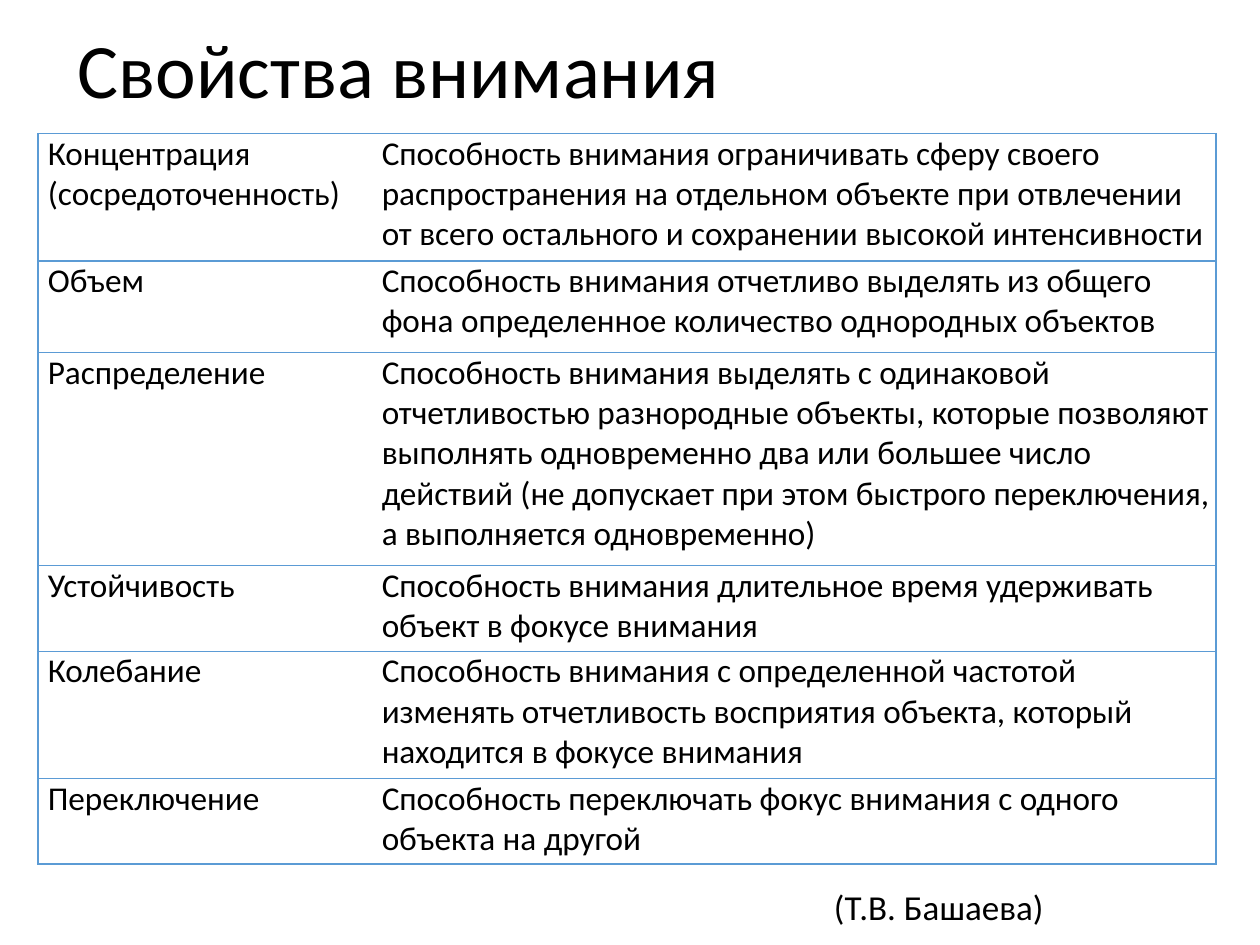
from lxml import etree
from pptx import Presentation
from pptx.dml.color import RGBColor
from pptx.enum import text
from pptx.oxml import ns
from pptx.util import Inches, Pt

BLACK = RGBColor(0x00, 0x00, 0x00)
WHITE = RGBColor(0xFF, 0xFF, 0xFF)
BLUE = RGBColor(0x5B, 0x9B, 0xD5)
FONT = "Calibri"

COLUMN_WIDTHS = [2.65, 6.7]
# Property, definition, row height in inches
PROPERTIES = [
    ("Концентрация (сосредоточенность)",
     "Способность внимания ограничивать сферу своего распространения на отдельном "
     "объекте при отвлечении от всего остального и сохранении высокой интенсивности", 1.01),
    ("Объем",
     "Способность внимания отчетливо выделять из общего фона определенное "
     "количество однородных объектов", 0.73),
    ("Распределение",
     "Способность внимания выделять с одинаковой отчетливостью разнородные объекты, "
     "которые позволяют выполнять одновременно два или большее число действий "
     "(не допускает при этом быстрого переключения, а выполняется одновременно)", 1.69),
    ("Устойчивость",
     "Способность внимания длительное время удерживать объект в фокусе внимания", 0.68),
    ("Колебание",
     "Способность внимания с определенной частотой изменять отчетливость восприятия "
     "объекта, который находится в фокусе внимания", 1.01),
    ("Переключение",
     "Способность переключать фокус внимания с одного объекта на другой", 0.68),
]


def write(frame, words, size, color=BLACK, line_spacing=None):
    paragraph = frame.paragraphs[0]
    paragraph.line_spacing = line_spacing
    run = paragraph.add_run()
    run.text = words
    run.font.name = FONT
    run.font.size = Pt(size)
    run.font.color.rgb = color


def add_label(slide, words, left, top, width, height,
              anchor=text.MSO_ANCHOR.TOP, **text_format):
    frame = slide.shapes.add_textbox(
        Inches(left), Inches(top), Inches(width), Inches(height)).text_frame
    frame.word_wrap = True
    frame.vertical_anchor = anchor
    write(frame, words, **text_format)


def set_borders(cell, visible_sides):
    """Draw the given sides in blue and hide the others."""
    properties = cell._tc.get_or_add_tcPr()
    for position, side in enumerate("LRTB"):
        line = etree.Element(ns.qn(f"a:ln{side}"), w=str(Pt(1)))
        if side in visible_sides:
            fill = etree.SubElement(line, ns.qn("a:solidFill"))
            etree.SubElement(fill, ns.qn("a:srgbClr"), val=str(BLUE))
        else:
            etree.SubElement(line, ns.qn("a:noFill"))
        properties.insert(position, line)


def fill_cell(cell, words, visible_sides):
    cell.margin_left, cell.margin_right = Inches(0.08), Inches(0.04)
    cell.margin_top = cell.margin_bottom = 0
    cell.fill.solid()
    cell.fill.fore_color.rgb = WHITE
    set_borders(cell, visible_sides)
    write(cell.text_frame, words, size=19)


def add_properties_table(slide, left, top):
    height = sum(row_height for *_, row_height in PROPERTIES)
    table = slide.shapes.add_table(
        len(PROPERTIES), len(COLUMN_WIDTHS), Inches(left), Inches(top),
        Inches(sum(COLUMN_WIDTHS)), Inches(height)).table
    table.first_row = table.horz_banding = False
    for column, width in zip(table.columns, COLUMN_WIDTHS):
        column.width = Inches(width)
    for index, (name, definition, row_height) in enumerate(PROPERTIES):
        table.rows[index].height = Inches(row_height)
        fill_cell(table.cell(index, 0), name, "LTB")
        fill_cell(table.cell(index, 1), definition, "RTB")


def main():
    presentation = Presentation()
    presentation.slide_width, presentation.slide_height = Inches(10), Inches(7.5)
    slide = presentation.slides.add_slide(presentation.slide_layouts[6])

    # Heading
    add_label(slide, "Свойства внимания", 0.52, 0, 8.62, 1.17,
              anchor=text.MSO_ANCHOR.MIDDLE, size=44, line_spacing=0.9)
    # Properties and their definitions
    add_properties_table(slide, 0.3, 1.06)
    # Author
    add_label(slide, "(Т.В. Башаева)", 6.52, 6.98, 2.62, 0.44, size=20)

    presentation.save("out.pptx")


if __name__ == "__main__":
    main()
